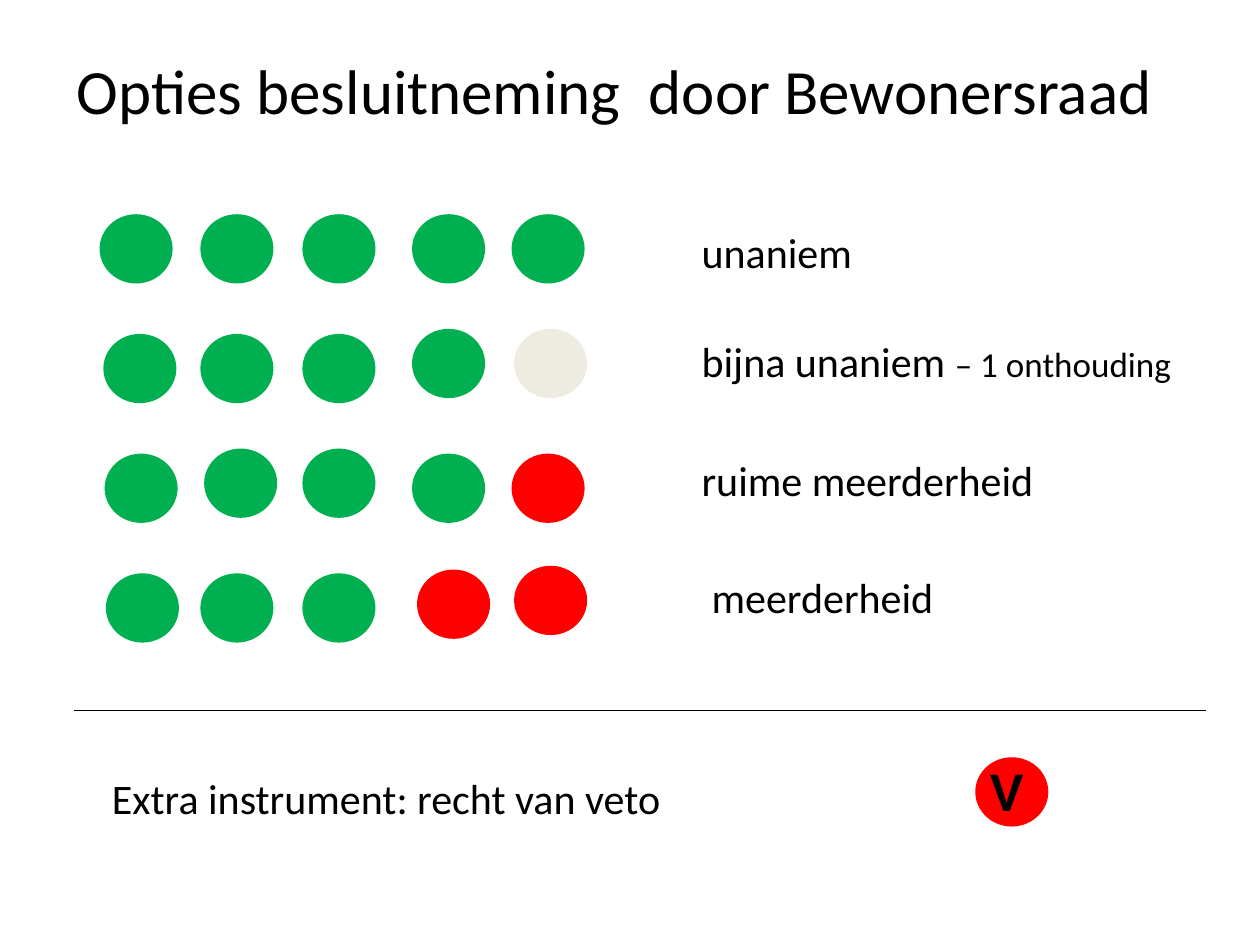
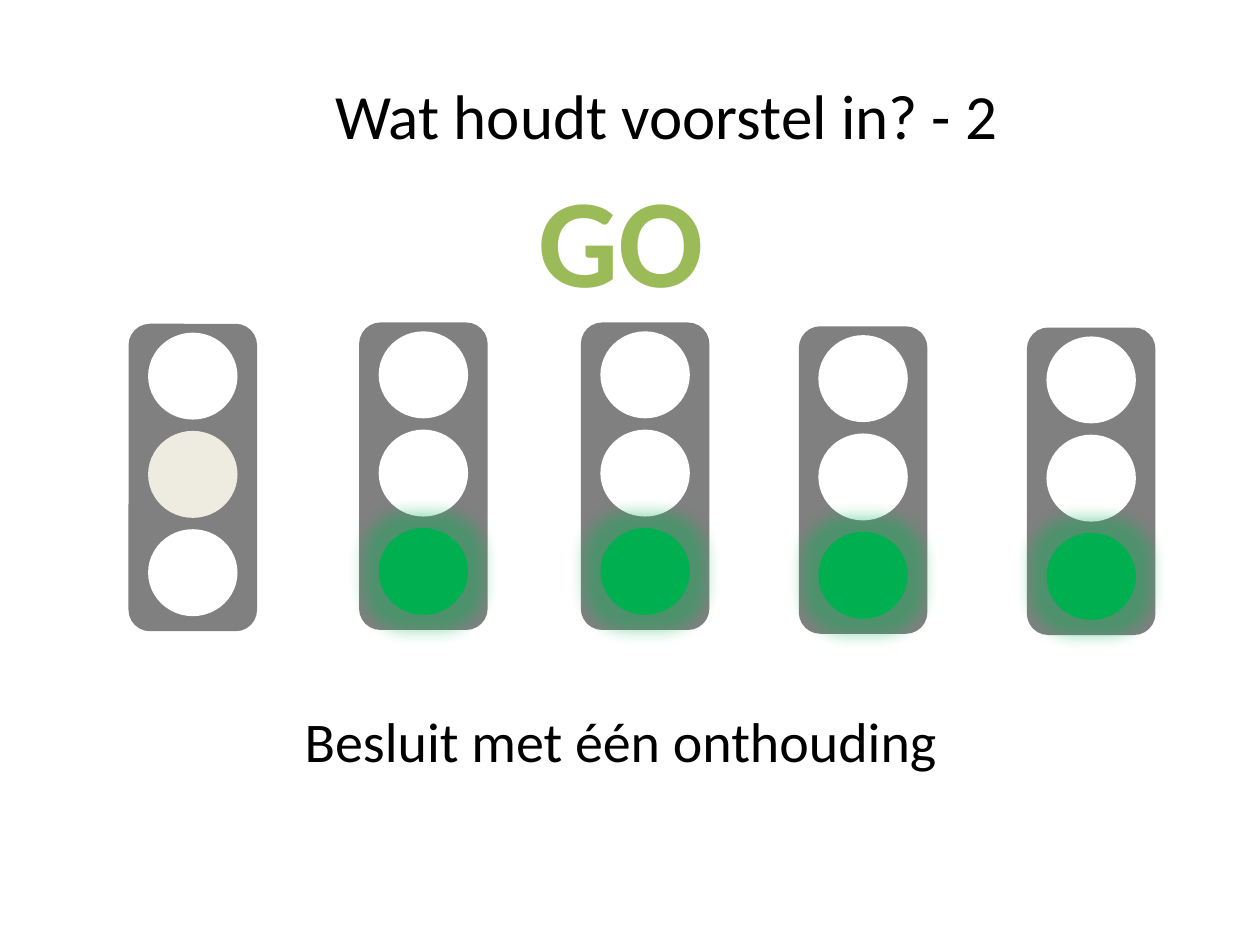
from lxml import etree
from pptx import Presentation
from pptx import util as u
from pptx.dml.color import RGBColor
from pptx.enum import shapes, text
from pptx.oxml.ns import qn

FONT = "Calibri"
COLOURS = {"for": "00B050", "abstain": "EEECE1", "against": "FF0000",
           "off": "FFFFFF", "housing": "808080", "go": "9BBB59", "ink": "000000"}

# Slide 1: votes per outcome, label runs (text, size), label left and top
OUTCOMES = [
    (["for"] * 5, [("unaniem", 24)], 5.47, 1.75),
    (["for"] * 4 + ["abstain"], [("bijna unaniem ", 24), ("– 1 onthouding", 20)], 5.47, 2.61),
    (["for"] * 4 + ["against"], [("ruime meerderheid", 24)], 5.47, 3.56),
    (["for"] * 3 + ["against"] * 2, [("meerderheid", 24)], 5.55, 4.49),
]
VOTE_SIZE = (0.58, 0.55)
VOTE_LEFTS = (0.79, 1.59, 2.4, 3.27, 4.06)
VOTE_TOP, VOTE_PITCH = 1.7, 0.95
# (row, column): shift of a vote away from its grid place
NUDGES = {(1, 0): (0.03, 0), (1, 3): (0, -0.04), (1, 4): (0.02, -0.04),
          (2, 0): (0.04, 0), (2, 1): (0.03, -0.04), (2, 2): (0, -0.04),
          (3, 0): (0.05, 0), (3, 3): (0.04, -0.03), (3, 4): (0.02, -0.06)}

# Slide 2: left and top of each traffic light, and its lamps from the top
GO_LAMPS = ("off", "off", "for")
LIGHTS = [(1.02, 2.57, ("off", "abstain", "off")), (2.85, 2.56, GO_LAMPS),
          (4.61, 2.56, GO_LAMPS), (6.34, 2.59, GO_LAMPS), (8.15, 2.6, GO_LAMPS)]
LIGHT_SIZE, LAMP_SIZE = (1.02, 2.44), (0.71, 0.69)
LAMP_TOP, LAMP_PITCH = 0.07, 0.78


def rgb(name):
    return RGBColor.from_string(COLOURS[name])


def inches(*lengths):
    return [u.Inches(x) for x in lengths]


def write(tf, runs, align=text.PP_ALIGN.LEFT, bold=False, colour="ink"):
    """Fill a text frame with one paragraph of (text, size) runs."""
    frame = {"word_wrap": True, "auto_size": text.MSO_AUTO_SIZE.NONE,
             "vertical_anchor": text.MSO_ANCHOR.TOP}
    for key, value in frame.items():
        setattr(tf, key, value)
    p = tf.paragraphs[0]
    p.alignment = align
    for words, size in runs:
        r = p.add_run()
        r.text = words
        for key, value in {"name": FONT, "size": u.Pt(size), "bold": bold}.items():
            setattr(r.font, key, value)
        r.font.color.rgb = rgb(colour)


def add_label(s, box, runs, **style):
    write(s.shapes.add_textbox(*inches(*box)).text_frame, runs, **style)


def add_titled_slide(prs, title, box):
    s = prs.slides.add_slide(prs.slide_layouts[5])
    sp = s.shapes.title
    for key, value in zip(("left", "top", "width", "height"), inches(*box)):
        setattr(sp, key, value)
    write(sp.text_frame, [(title, 36)])
    return s


def add_plain(parent, kind, left, top, size, colour):
    """Add a filled shape without line or shadow to a slide or group."""
    sp = parent.shapes.add_shape(kind, *inches(left, top, *size))
    sp.shadow.inherit = False
    sp.fill.solid()
    sp.fill.fore_color.rgb = rgb(colour)
    sp.line.fill.background()
    return sp


def add_glow(sp, colour, radius=18, alpha=40):
    effects = sp._element.spPr.find(qn("a:effectLst"))
    glow = etree.SubElement(effects, qn("a:glow"), rad=str(u.Pt(radius)))
    tint = etree.SubElement(glow, qn("a:srgbClr"), val=COLOURS[colour])
    etree.SubElement(tint, qn("a:alpha"), val=str(alpha * 1000))


def add_divider(s, left, right, y):
    line = s.shapes.add_connector(shapes.MSO_CONNECTOR.STRAIGHT,
                                  *inches(left, y, right, y))
    line.line.color.rgb = rgb("ink")
    line.line.width = u.Pt(0.75)
    etree.SubElement(line._element.spPr, qn("a:effectLst"))


def add_traffic_light(s, left, top, lamps):
    group = s.shapes.add_group_shape()
    add_plain(group, shapes.MSO_SHAPE.ROUNDED_RECTANGLE, left, top, LIGHT_SIZE, "housing")
    lamp_left = left + (LIGHT_SIZE[0] - LAMP_SIZE[0]) / 2
    for i, lamp in enumerate(lamps):
        sp = add_plain(group, shapes.MSO_SHAPE.OVAL, lamp_left,
                       top + LAMP_TOP + i * LAMP_PITCH, LAMP_SIZE, lamp)
        if lamp == "for":
            add_glow(sp, lamp)


def build_options(prs):
    s = add_titled_slide(prs, "Opties besluitneming  door Bewonersraad",
                         (0.51, 0.36, 9, 0.71))
    for row, (votes, label, left, top) in enumerate(OUTCOMES):
        for col, vote in enumerate(votes):
            dx, dy = NUDGES.get((row, col), (0, 0))
            add_plain(s, shapes.MSO_SHAPE.OVAL, VOTE_LEFTS[col] + dx,
                      VOTE_TOP + row * VOTE_PITCH + dy, VOTE_SIZE, vote)
        add_label(s, (left, top, 10 - left, 0.5), label)
    add_divider(s, 0.59, 9.57, 5.64)
    add_label(s, (0.79, 6.08, 5.03, 0.5), [("Extra instrument: recht van veto", 24)])
    add_plain(s, shapes.MSO_SHAPE.OVAL, 7.74, 6.01, VOTE_SIZE, "against")
    add_label(s, (7.76, 5.95, 1.18, 0.64), [("V", 32)], bold=True)


def build_go(prs):
    s = add_titled_slide(prs, "Wat houdt voorstel in? - 2", (2.56, 0.56, 5.6, 0.71))
    for light in LIGHTS:
        add_traffic_light(s, *light)
    add_label(s, (2.32, 5.56, 7.13, 0.64), [("Besluit met één onthouding", 32)])
    add_label(s, (4.03, 1.23, 1.8, 1.31), [("GO", 72)],
              align=text.PP_ALIGN.CENTER, bold=True, colour="go")


def main():
    prs = Presentation()
    prs.slide_width, prs.slide_height = inches(10, 7.5)
    build_options(prs)
    build_go(prs)
    prs.save("out.pptx")


if __name__ == "__main__":
    main()
